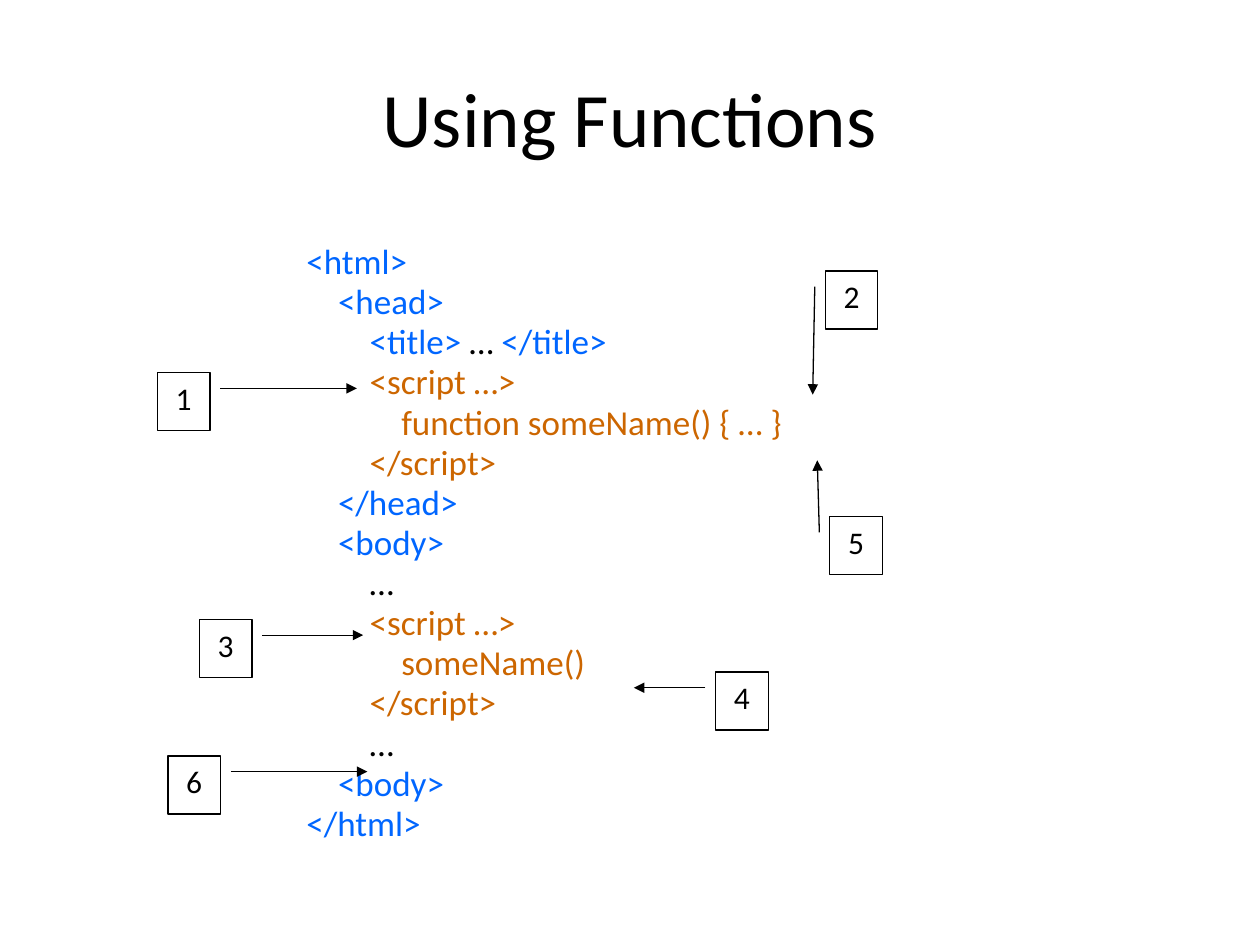
from typing import NamedTuple

from lxml.etree import SubElement
from pptx import Presentation
from pptx.dml.color import RGBColor
from pptx.enum.shapes import MSO_SHAPE
from pptx.enum.text import MSO_ANCHOR, PP_ALIGN
from pptx.oxml.ns import qn
from pptx.util import Pt

COLORS = {"black": "000000", "blue": "0066FF", "brown": "CC6600"}
FONT = "Calibri"
STEP = 18.08  # indent per code level
BOX_W, BOX_H = 30, 33.2


class Line(NamedTuple):
    level: int
    runs: list[tuple[str, str]]


class Callout(NamedTuple):
    label: str
    left: float
    top: float
    adjust: tuple[float, float, float, float]  # start y, x; tip y, x


CODE = [
    Line(0, [("<html>", "blue")]),
    Line(1, [("<head>", "blue")]),
    Line(2, [("<title>", "blue"), (" … ", "black"), ("</title>", "blue")]),
    Line(2, [("<script …>", "brown")]),
    Line(3, [("function someName() { … }", "brown")]),
    Line(2, [("</script>", "brown")]),
    Line(1, [("</head>", "blue")]),
    Line(1, [("<body>", "blue")]),
    Line(2, [("…", "black")]),
    Line(2, [("<script …>", "brown")]),
    Line(3, [("someName()", "brown")]),
    Line(2, [("</script>", "brown")]),
    Line(2, [("…", "black")]),
    Line(1, [("<body>", "blue")]),
    Line(0, [("</html>", "blue")]),
]

CALLOUTS = [
    Callout("1", 90, 213, (0.27, 1.2, 0.27, 3.8)),
    Callout("2", 471.6, 154.8, (0.27, -0.2, 2.13, -0.24)),
    Callout("3", 114, 354, (0.27, 1.2, 0.27, 3.12)),
    Callout("4", 409, 384, (0.27, -0.2, 0.27, -1.56)),
    Callout("5", 474.2, 295.2, (0.27, -0.2, -0.97, -0.24)),
    Callout("6", 96, 432, (0.27, 1.2, 0.27, 3.8)),
]


def tint(name: str) -> RGBColor:
    return RGBColor.from_string(COLORS[name])


def style(para, size: float) -> None:
    para.font.name = FONT
    para.font.size = Pt(size)
    para.font.color.rgb = tint("black")


def add_title(slide, text: str) -> None:
    frame = slide.shapes.add_textbox(Pt(36), Pt(21.6), Pt(648), Pt(90)).text_frame
    frame.word_wrap = True
    frame.vertical_anchor = MSO_ANCHOR.MIDDLE
    para = frame.paragraphs[0]
    para.text = text
    para.alignment = PP_ALIGN.CENTER
    style(para, 44)


def add_code(slide, lines: list[Line]) -> None:
    frame = slide.shapes.add_textbox(Pt(168), Pt(138), Pt(366), Pt(366)).text_frame
    frame.word_wrap = True
    for i, line in enumerate(lines):
        para = frame.add_paragraph() if i else frame.paragraphs[0]
        style(para, 20)
        para.line_spacing = 0.8
        para.space_before = Pt(3.7)
        para._p.get_or_add_pPr().set("marL", str(Pt(line.level * STEP)))
        for text, color in line.runs:
            run = para.add_run()
            run.text = text
            run.font.color.rgb = tint(color)


def add_callout(slide, item: Callout) -> None:
    shape = slide.shapes.add_shape(
        MSO_SHAPE.LINE_CALLOUT_1, Pt(item.left), Pt(item.top), Pt(BOX_W), Pt(BOX_H)
    )
    for i, value in enumerate(item.adjust):
        shape.adjustments[i] = value
    shape.shadow.inherit = False
    shape.fill.background()
    shape.line.color.rgb = tint("black")
    shape.line.width = Pt(0.75)
    # Arrowhead at the tip of the callout line
    edge = shape.element.spPr.find(qn("a:ln"))
    SubElement(edge, qn("a:tailEnd"), type="triangle")
    frame = shape.text_frame
    frame.vertical_anchor = MSO_ANCHOR.TOP
    para = frame.paragraphs[0]
    para.text = item.label
    para.alignment = PP_ALIGN.CENTER
    style(para, 18)


def main() -> None:
    deck = Presentation()
    deck.slide_width, deck.slide_height = Pt(720), Pt(540)
    slide = deck.slides.add_slide(deck.slide_layouts[6])
    add_title(slide, "Using Functions")
    add_code(slide, CODE)
    for item in CALLOUTS:
        add_callout(slide, item)
    deck.save("out.pptx")


if __name__ == "__main__":
    main()
